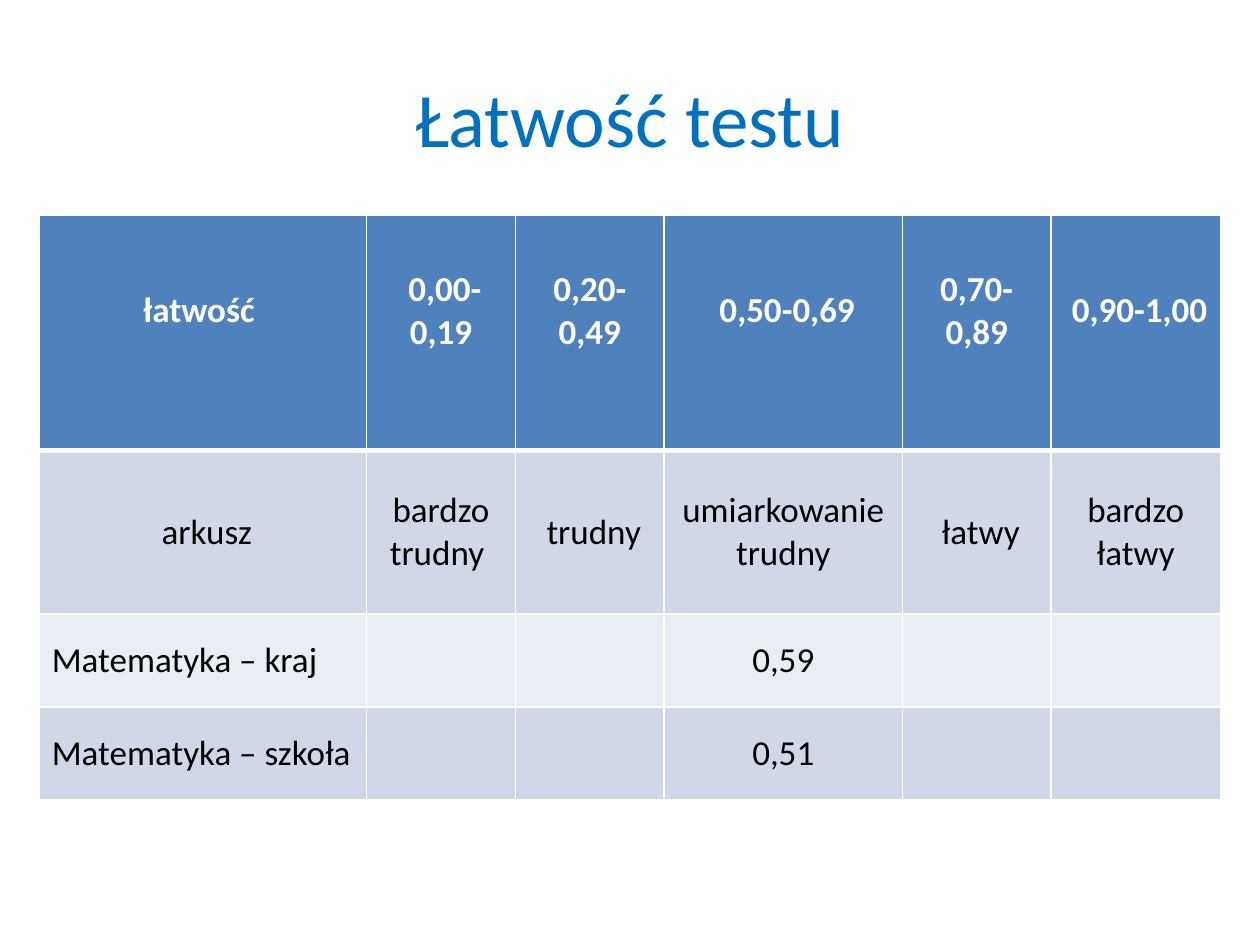
from dataclasses import dataclass

from lxml.etree import SubElement
from pptx import Presentation
from pptx.dml.color import RGBColor
from pptx.enum.text import MSO_ANCHOR, PP_ALIGN
from pptx.oxml.ns import qn
from pptx.slide import Slide
from pptx.table import _Cell
from pptx.text.text import TextFrame
from pptx.util import Cm, Pt

FONT = "Calibri"
TITLE_BLUE = RGBColor(0x00, 0x70, 0xC0)
HEADER_BLUE = RGBColor(0x4F, 0x81, 0xBD)
BAND_DARK = RGBColor(0xD0, 0xD8, 0xE8)
BAND_LIGHT = RGBColor(0xE9, 0xED, 0xF4)
WHITE = RGBColor(0xFF, 0xFF, 0xFF)
BLACK = RGBColor(0x00, 0x00, 0x00)

COLUMN_WIDTHS = [Cm(w) for w in (6.6, 3, 3, 4.8, 3, 3.41)]


@dataclass(frozen=True)
class Band:
    texts: tuple[str, ...]
    height: Cm
    fill: RGBColor
    color: RGBColor = BLACK
    bold: bool = False
    label_align: PP_ALIGN = PP_ALIGN.CENTER
    top_line: int = 1
    bottom_line: int = 1
    bottom_margin: Cm = Cm(0.13)


BANDS = [
    Band(("łatwość ", " 0,00-0,19", "0,20-0,49", " 0,50-0,69", "0,70-0,89", " 0,90-1,00"),
         Cm(4.75), HEADER_BLUE, WHITE, bold=True, bottom_line=3, bottom_margin=Cm(1)),
    Band((" arkusz", "bardzo trudny ", " trudny", "umiarkowanie trudny", " łatwy", "bardzo łatwy"),
         Cm(3.3), BAND_DARK, top_line=3),
    Band(("Matematyka – kraj", "", "", "0,59", "", ""),
         Cm(1.87), BAND_LIGHT, label_align=PP_ALIGN.LEFT),
    Band(("Matematyka – szkoła", "", "", "0,51", "", ""),
         Cm(1.87), BAND_DARK, label_align=PP_ALIGN.LEFT),
]


def write(frame: TextFrame, text: str, size: int, color: RGBColor,
          bold: bool = False, align: PP_ALIGN = PP_ALIGN.CENTER) -> None:
    frame.text = text
    paragraph = frame.paragraphs[0]
    paragraph.alignment = align
    for run in paragraph.runs:
        run.font.name = FONT
        run.font.size = Pt(size)
        run.font.bold = bold
        run.font.color.rgb = color


def set_borders(cell: _Cell, top: int, bottom: int) -> None:
    properties = cell._tc.get_or_add_tcPr()
    widths = {"a:lnL": 1, "a:lnR": 1, "a:lnT": top, "a:lnB": bottom}
    for tag, width in widths.items():
        line = SubElement(properties, qn(tag), w=str(Pt(width)))
        solid = SubElement(line, qn("a:solidFill"))
        SubElement(solid, qn("a:srgbClr"), val=str(WHITE))


def add_title(slide: Slide, text: str) -> None:
    title = slide.shapes.add_textbox(Cm(1.27), Cm(0.76), Cm(22.86), Cm(3.18))
    title.text_frame.word_wrap = True
    title.text_frame.vertical_anchor = MSO_ANCHOR.MIDDLE
    write(title.text_frame, text, 44, TITLE_BLUE)


def add_difficulty_table(slide: Slide, bands: list[Band]) -> None:
    table = slide.shapes.add_table(
        len(bands), len(COLUMN_WIDTHS), Cm(0.79), Cm(4.33),
        sum(COLUMN_WIDTHS), sum(band.height for band in bands)).table
    for column, width in zip(table.columns, COLUMN_WIDTHS):
        column.width = width
    for row, band in zip(table.rows, bands):
        row.height = band.height
        for index, (cell, text) in enumerate(zip(row.cells, band.texts)):
            align = PP_ALIGN.CENTER if index else band.label_align
            write(cell.text_frame, text, 20, band.color, band.bold, align)
            cell.vertical_anchor = MSO_ANCHOR.MIDDLE
            cell.margin_bottom = band.bottom_margin
            set_borders(cell, band.top_line, band.bottom_line)
            cell.fill.solid()
            cell.fill.fore_color.rgb = band.fill


def main() -> None:
    deck = Presentation()
    deck.slide_width, deck.slide_height = Cm(25.4), Cm(19.05)
    slide = deck.slides.add_slide(deck.slide_layouts[6])
    add_title(slide, "Łatwość testu")
    add_difficulty_table(slide, BANDS)
    deck.save("out.pptx")


if __name__ == "__main__":
    main()
